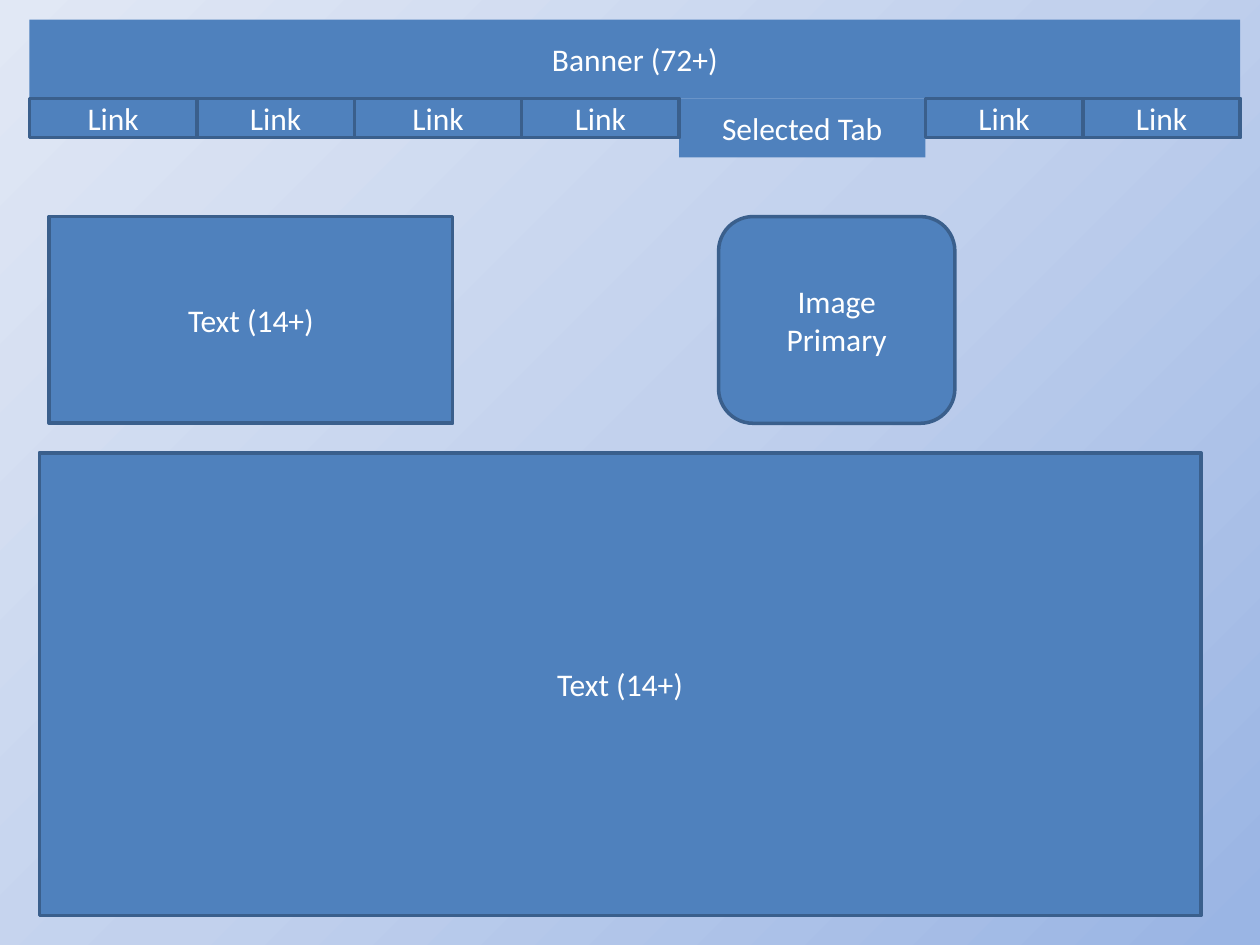
import pptx
import pptx.util
import pptx.dml.color
import pptx.enum.shapes
import pptx.enum.text
import pptx.oxml.ns
from lxml import etree

Pt = pptx.util.Pt
RGB = pptx.dml.color.RGBColor.from_string
SHAPE = pptx.enum.shapes.MSO_SHAPE
UNIT = 720 / 128
COLORS = {"box": "4F81BD", "edge": "3A5F8C", "text": "FFFFFF",
          "bg_dark": "9AB5E4", "bg_mid": "C2D1ED", "bg_light": "E1E8F5"}


def add_background(s):
    """Fill the slide with a circular gradient centred on the bottom right."""
    s.background.fill.gradient()
    grad = s.element.xpath(".//p:bg//a:gradFill")[0]
    qn = pptx.oxml.ns.qn
    for child in list(grad):
        grad.remove(child)
    stops = etree.SubElement(grad, qn("a:gsLst"))
    for pos, name in ((1, "bg_dark"), (50, "bg_mid"), (100, "bg_light")):
        gs = etree.SubElement(stops, qn("a:gs"), pos=str(pos * 1000))
        etree.SubElement(gs, qn("a:srgbClr"), val=COLORS[name])
    circle = etree.SubElement(grad, qn("a:path"), path="circle")
    etree.SubElement(circle, qn("a:fillToRect"), l="100000", t="100000")


def add_box(s, box, lines, outlined=True, kind=SHAPE.RECTANGLE):
    """Add a labelled box at (left, top, width, height) in grid units."""
    sp = s.shapes.add_shape(kind, *(Pt(v * UNIT) for v in box))
    sp.shadow.inherit = False
    sp.fill.solid()
    sp.fill.fore_color.rgb = RGB(COLORS["box"])
    if outlined:
        sp.line.color.rgb = RGB(COLORS["edge"])
        sp.line.width = Pt(2)
    else:
        sp.line.fill.background()
    tf = sp.text_frame
    tf.word_wrap = True
    tf.vertical_anchor = pptx.enum.text.MSO_ANCHOR.MIDDLE
    for i, line in enumerate(lines):
        p = tf.add_paragraph() if i else tf.paragraphs[0]
        p.alignment = pptx.enum.text.PP_ALIGN.CENTER
        r = p.add_run()
        r.text = line
        r.font.name = "Calibri"
        r.font.size = Pt(18)
        r.font.color.rgb = RGB(COLORS["text"])


def add_header(s, left, top, width, height):
    """Place the banner and the row of tabs that hangs below it."""
    add_box(s, (left, top, width, height), ["Banner (72+)"], outlined=False)
    tab_widths = (17, 16, 17, 16, 25, 16, 16)
    selected = 4
    tab_top = top + height
    lefts = [left + sum(tab_widths[:i]) for i in range(len(tab_widths))]
    add_box(s, (lefts[selected], tab_top, tab_widths[selected], 6),
            ["Selected Tab"], outlined=False)
    for i, (x, w) in enumerate(zip(lefts, tab_widths)):
        if i != selected:
            add_box(s, (x, tab_top, w, 4), ["Link"])


def add_content(s, left, top, width, height):
    """Place the main text block, with the intro text and image above it."""
    main_top = top + 24
    add_box(s, (left, main_top, width, height - 24), ["Text (14+)"])
    add_box(s, (left + 1, top, 41, 21), ["Text (14+)"])
    add_box(s, (left + 69, top, 24, 21), ["Image", "Primary"],
            kind=SHAPE.ROUNDED_RECTANGLE)


def main():
    """Build the page layout slide and save it."""
    prs = pptx.Presentation()
    prs.slide_width, prs.slide_height = Pt(720), Pt(540)
    s = prs.slides.add_slide(prs.slide_layouts[6])
    add_background(s)
    add_header(s, 3, 2, 123, 8)
    add_content(s, 4, 22, 118, 71)
    prs.save("out.pptx")


if __name__ == "__main__":
    main()
